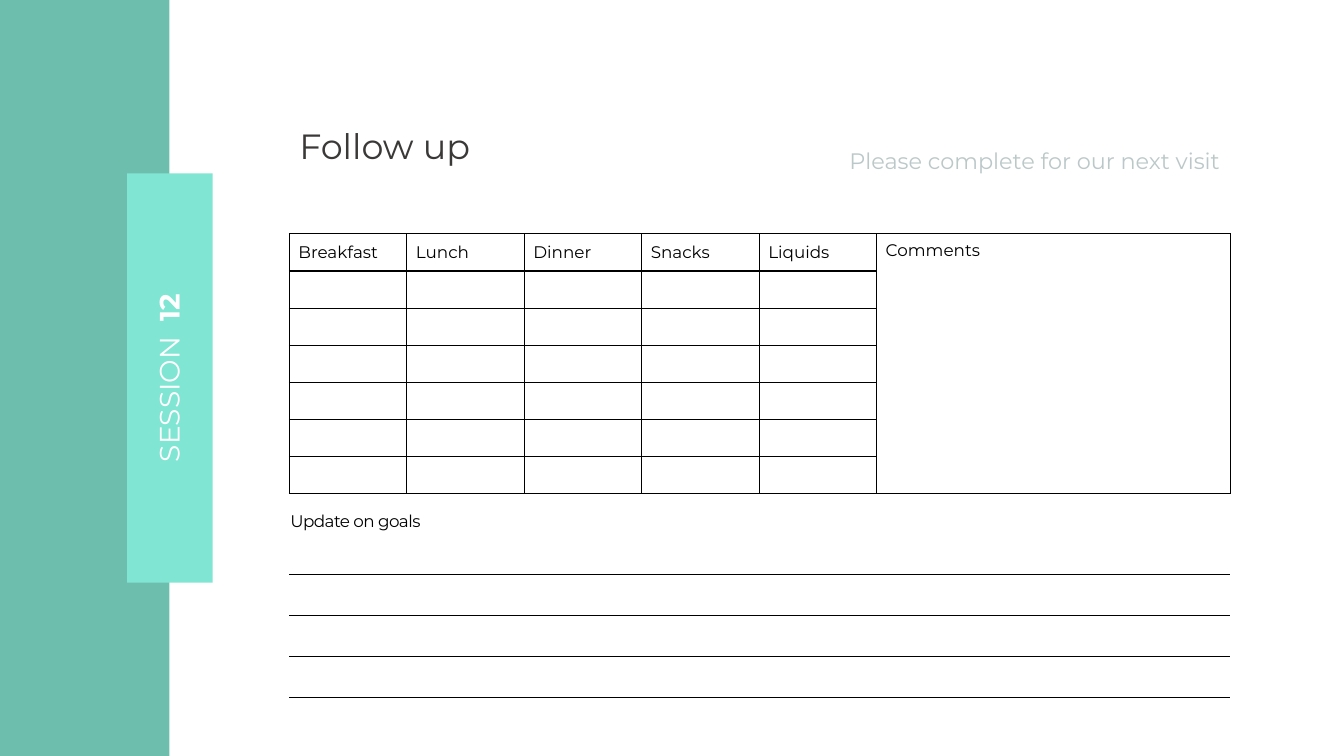
from dataclasses import dataclass
from typing import Any

from lxml.etree import SubElement as Sub
from pptx import Presentation as Deck
from pptx.dml.color import RGBColor as Rgb
from pptx.enum.shapes import MSO_SHAPE as Form
from pptx.enum.text import MSO_ANCHOR as Anchor, PP_ALIGN as Align
from pptx.oxml.ns import qn
from pptx.util import Inches, Pt


@dataclass(frozen=True)
class Theme:
    font: str = "Montserrat"
    teal: str = "6DBEAD"
    mint: str = "81E5D3"
    white: str = "FFFFFF"
    black: str = "000000"
    dark: str = "3B3838"
    pale: str = "BCC8C8"
    title: int = 25
    label: int = 20
    hint: int = 16
    body: int = 12
    rule: int = 1


THEME = Theme()


@dataclass(frozen=True)
class Box:
    left: float
    top: float
    width: float
    height: float

    def place(self) -> list[int]:
        return [Inches(n) for n in (self.left, self.top, self.width, self.height)]


@dataclass(frozen=True)
class Bar:
    box: Box
    fill: str


@dataclass(frozen=True)
class Run:
    text: str
    size: int
    color: str
    bold: bool = False
    track: float = 0


@dataclass(frozen=True)
class Note:
    box: Box
    runs: tuple[Run, ...]
    frame: dict[str, Any]
    para: dict[str, Any]
    turn: int = 0


FLUSH = dict.fromkeys(("margin_left", "margin_right", "margin_top", "margin_bottom"), 0)
WRAP = {"word_wrap": True}

BARS = (
    Bar(Box(0, 0, 1.68, 7.5), THEME.teal),
    Bar(Box(1.26, 1.72, 0.85, 4.06), THEME.mint),
)
NOTES = (
    Note(Box(0.74, 3.53, 1.87, 0.44),
         (Run("SESSION ", THEME.label, THEME.white),
          Run(" 12", THEME.label, THEME.white, bold=True)),
         {"word_wrap": False}, {"alignment": Align.CENTER}, turn=270),
    Note(Box(8.21, 1.19, 3.99, 0.52),
         (Run("Please complete for our next visit", THEME.hint, THEME.pale),),
         WRAP, {"alignment": Align.RIGHT, "line_spacing": Pt(35)}),
    Note(Box(2.87, 1.19, 2.91, 0.52),
         (Run("Follow up", THEME.title, THEME.dark),), WRAP, {}),
    Note(Box(2.87, 5.07, 2.2, 0.16),
         (Run("Update on goals", THEME.body, THEME.black, track=-0.4),),
         WRAP | FLUSH | {"margin_left": Inches(0.01)}, {}),
)
MEALS = ("Breakfast", "Lunch", "Dinner", "Snacks", "Liquids")
WEEK = 7
LINES = 3


def apply(item: Any, values: dict[str, Any]) -> None:
    for name, value in values.items():
        setattr(item, name, value)


def write(para: Any, run: Run) -> None:
    part = para.add_run()
    part.text = run.text
    apply(part.font, {"name": THEME.font, "size": Pt(run.size), "bold": run.bold})
    part.font.color.rgb = Rgb.from_string(run.color)
    if run.track:
        part.font._element.set("spc", str(round(run.track * 100)))


def draw_bar(slide: Any, bar: Bar) -> None:
    shape = slide.shapes.add_shape(Form.RECTANGLE, *bar.box.place())
    shape.shadow.inherit = False
    shape.fill.solid()
    shape.fill.fore_color.rgb = Rgb.from_string(bar.fill)
    shape.line.fill.background()


def draw_note(slide: Any, note: Note) -> None:
    shape = slide.shapes.add_textbox(*note.box.place())
    shape.rotation = note.turn
    apply(shape.text_frame, note.frame)
    para = shape.text_frame.paragraphs[0]
    apply(para, note.para)
    for run in note.runs:
        write(para, run)


def edge(cell: Any, sides: str) -> None:
    """Rule the given sides (of L, R, T, B) and clear the others."""
    props = cell._tc.get_or_add_tcPr()
    for side in "LRTB":
        line = Sub(props, qn(f"a:ln{side}"), w=str(Pt(THEME.rule)))
        if side in sides:
            fill = Sub(line, qn("a:solidFill"))
            Sub(fill, qn("a:srgbClr"), val=THEME.black)
        else:
            Sub(line, qn("a:noFill"))


def draw_grid(slide: Any, box: Box, rows: int, widths: list[float], sides: str) -> Any:
    grid = slide.shapes.add_table(rows, len(widths), *box.place()).table
    apply(grid, {"first_row": False, "horz_banding": False})
    for col, width in zip(grid.columns, widths):
        col.width = Inches(width)
    for row in grid.rows:
        row.height = Inches(box.height / rows)
    for cell in grid.iter_cells():
        edge(cell, sides)
        cell.fill.background()
        apply(cell, FLUSH)
        cell.text_frame.paragraphs[0].font.size = Pt(THEME.body)
    return grid


def draw_log(slide: Any) -> None:
    """Draw the meal table with one tall cell for comments."""
    widths = [1.165] * len(MEALS) + [3.51]
    grid = draw_grid(slide, Box(2.87, 2.32, 9.33, 2.58), WEEK, widths, "LRTB")
    last = len(MEALS)
    grid.cell(0, last).merge(grid.cell(WEEK - 1, last))
    for col, head in enumerate((*MEALS, "Comments")):
        cell = grid.cell(0, col)
        style = {"margin_left": Inches(0.09), "vertical_anchor": Anchor.MIDDLE}
        if col == last:
            style |= {"margin_top": Inches(0.06), "vertical_anchor": Anchor.TOP}
        apply(cell, style)
        write(cell.text_frame.paragraphs[0], Run(head, THEME.body, THEME.black))


def main() -> None:
    deck = Deck()
    apply(deck, {"slide_width": Inches(13.33), "slide_height": Inches(7.5)})
    slide = deck.slides.add_slide(deck.slide_layouts[6])
    for bar in BARS:
        draw_bar(slide, bar)
    draw_log(slide)
    for note in NOTES:
        draw_note(slide, note)
    draw_grid(slide, Box(2.87, 5.7, 9.33, 1.22), LINES, [9.33], "TB")
    deck.save("out.pptx")


if __name__ == "__main__":
    main()
